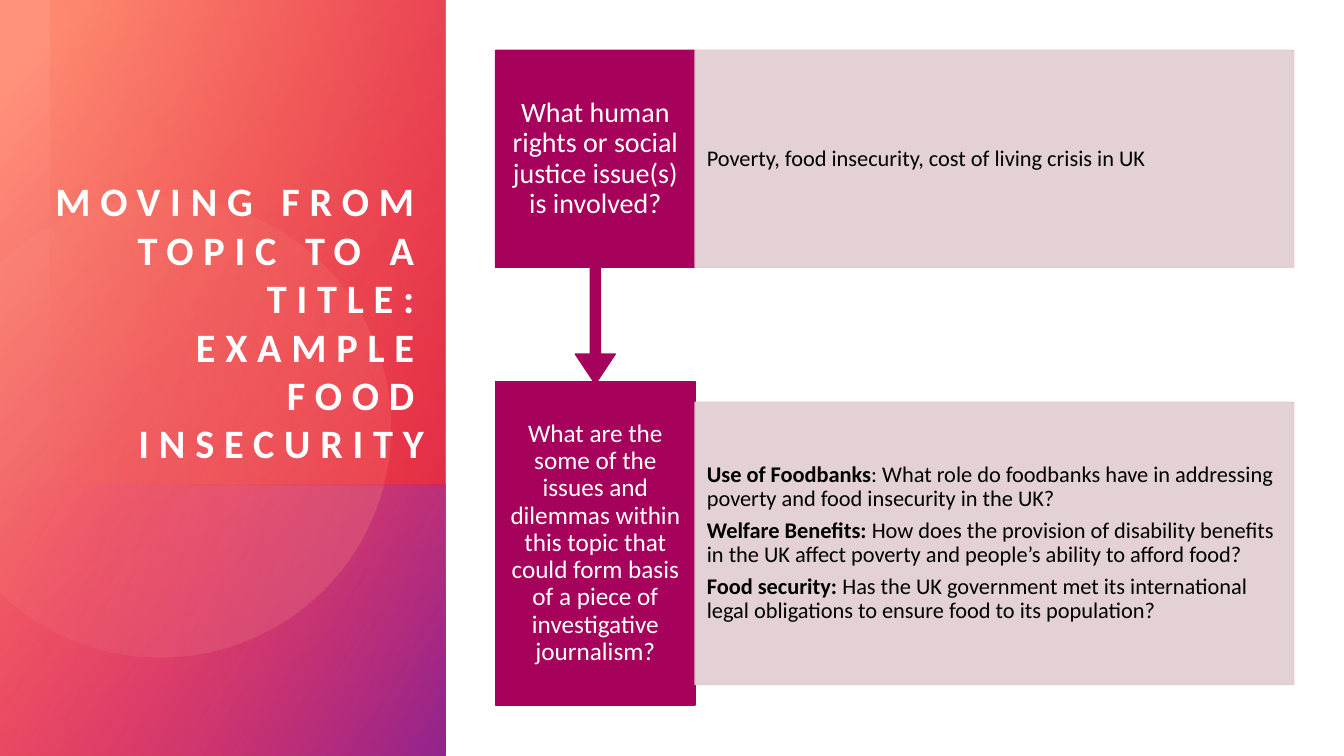
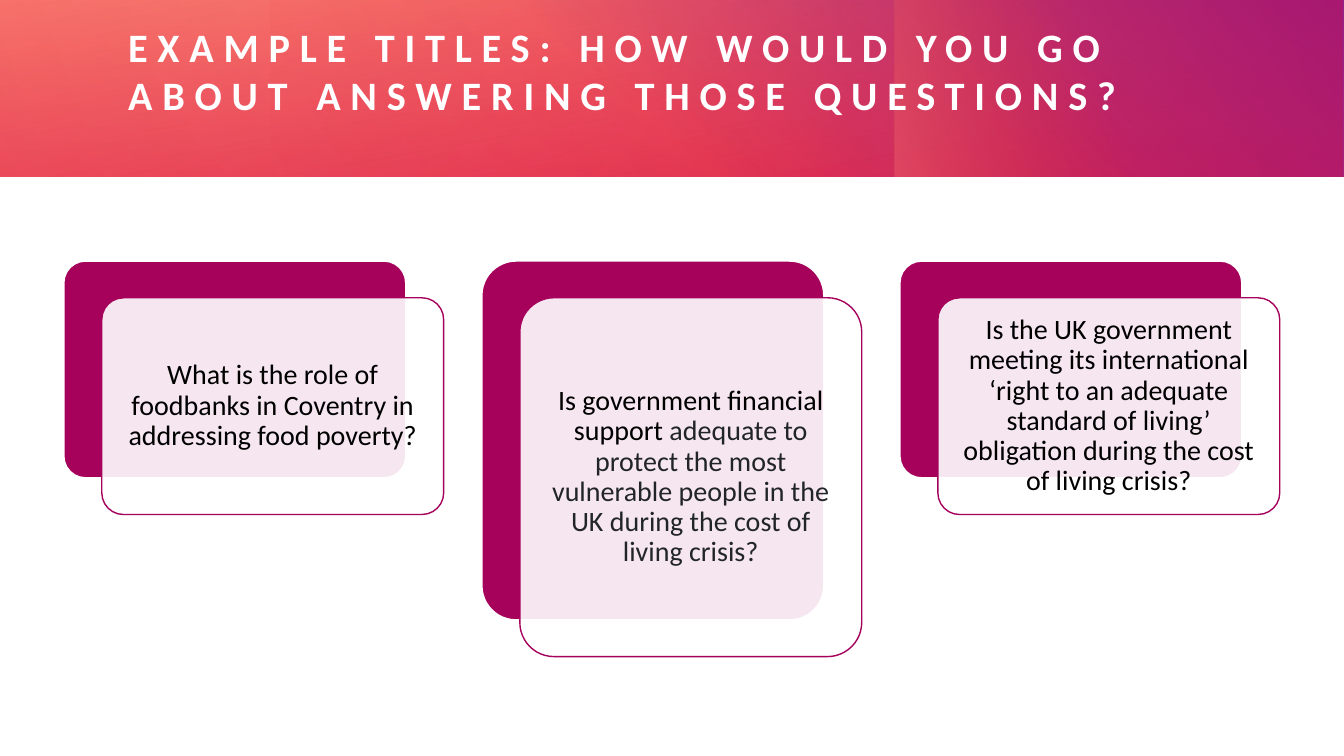
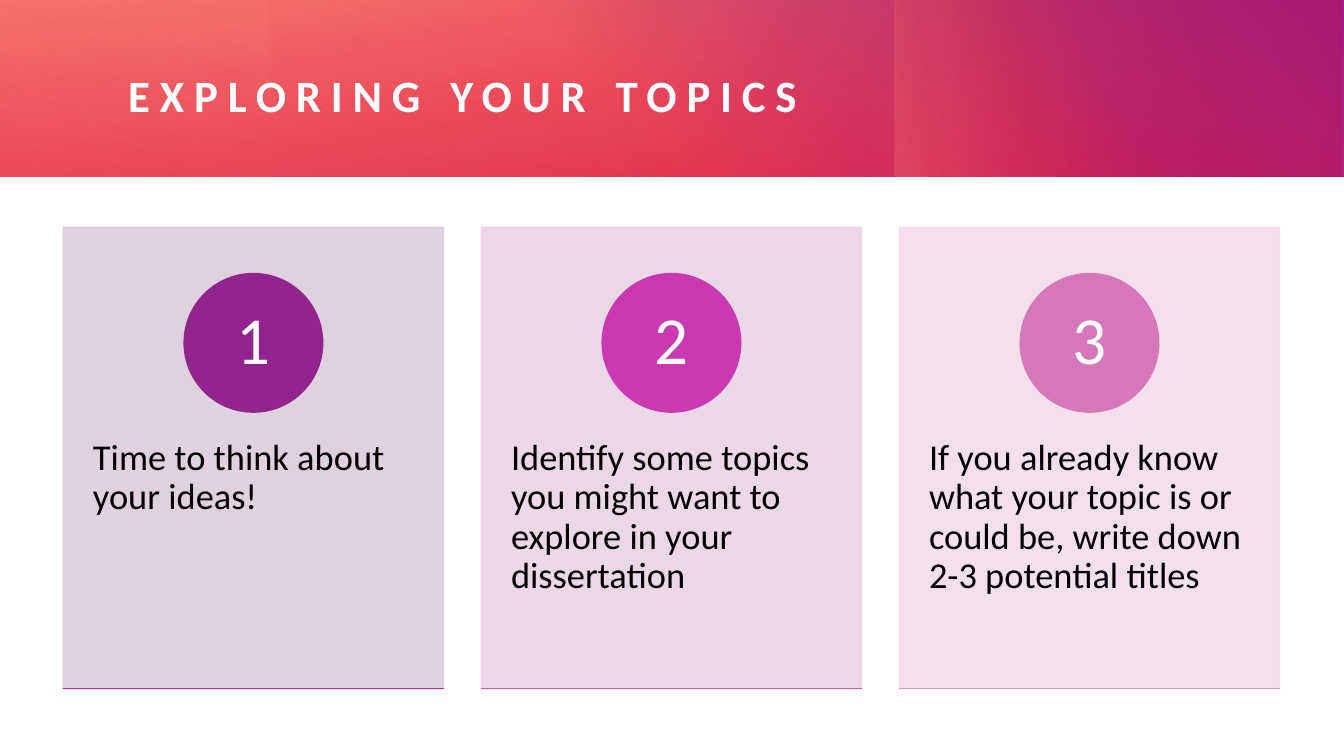
from dataclasses import dataclass
from math import acos, cos, sin

from pptx import Presentation
from pptx.dml.color import RGBColor
from pptx.enum.shapes import MSO_CONNECTOR, MSO_SHAPE
from pptx.enum.text import MSO_ANCHOR, MSO_AUTO_SIZE, PP_ALIGN
from pptx.oxml.ns import qn
from pptx.oxml.xmlchemy import OxmlElement
from pptx.util import Pt


@dataclass(frozen=True)
class Theme:
    font: str = "Calibri"
    white: str = "FFFFFF"
    black: str = "000000"
    ink: str = "212529"
    berry: str = "A6025C"
    blush: str = "E1CCD2"
    peach: str = "FF907A"
    pale_peach: str = "FFBCAF"
    red: str = "DA002F"
    orange: str = "FE4A00"
    rose: str = "FF5076"
    purple: str = "92248E"
    title: float = 28.8
    short_title: float = 32
    answer: float = 16
    long_question: float = 18
    question: float = 20
    step: float = 26
    number: float = 48


THEME = Theme()
WIDTH, HEIGHT = 960, 540
SIDE_WIDTH, SIDE_SPLIT = 318, 346.5
BAND_HEIGHT = 126
COLUMN_LEFT, COLUMN_STEP, COLUMN_WIDTH = 45.2, 298.6, 271.6


class Deck:
    def __init__(self, theme):
        self.theme = theme
        self.prs = Presentation()
        self.prs.slide_width, self.prs.slide_height = Pt(WIDTH), Pt(HEIGHT)
        self.slide = None

    def new_slide(self):
        self.slide = self.prs.slides.add_slide(self.prs.slide_layouts[5])

    def set_alpha(self, shape, alphas):
        colors = shape._element.spPr.iter(qn("a:srgbClr"))
        for color, alpha in zip(colors, alphas):
            if alpha < 100:
                node = OxmlElement("a:alpha")
                node.set("val", str(alpha * 1000))
                color.append(node)

    def paint_gradient(self, shape, stops, angle):
        shape.shadow.inherit = False
        shape.line.fill.background()
        shape.fill.gradient()
        shape.fill.gradient_angle = (360 - angle) % 360
        for stop, (position, color, _) in zip(shape.fill.gradient_stops, stops):
            stop.position = position / 100
            stop.color.rgb = RGBColor.from_string(color)
        self.set_alpha(shape, [alpha for _, _, alpha in stops])

    def wash(self, box, stops, angle, rotation=0, flip=False):
        left, top, width, height = box
        if rotation in (90, 270):
            left, top = left + (width - height) / 2, top + (height - width) / 2
            width, height = height, width
        shape = self.slide.shapes.add_shape(
            MSO_SHAPE.RECTANGLE, Pt(left), Pt(top), Pt(width), Pt(height))
        shape.rotation = rotation
        if flip:
            shape._element.spPr.find(qn("a:xfrm")).set("flipH", "1")
        self.paint_gradient(shape, stops, angle)

    def clipped_disc(self, x, y, radius, stops, angle, steps=90):
        limit = acos(-x / radius)
        turns = [limit * (2 * i / steps - 1) for i in range(steps + 1)]
        points = [(Pt(x + radius * cos(t)), Pt(y + radius * sin(t))) for t in turns]
        builder = self.slide.shapes.build_freeform(*points[0])
        builder.add_line_segments(points[1:], close=True)
        self.paint_gradient(builder.convert_to_shape(), stops, angle)

    def side_panel(self):
        t = self.theme
        self.wash((0, 0, SIDE_WIDTH, HEIGHT),
                  [(8, t.peach, 100), (100, t.red, 89)], 50, 270, True)
        self.wash((0, SIDE_SPLIT, SIDE_WIDTH, HEIGHT - SIDE_SPLIT),
                  [(0, t.rose, 0), (99, t.purple, 100)], 60, 270, True)
        self.clipped_disc(114.5, 305.3, 164.2,
                          [(36, t.pale_peach, 6), (100, t.peach, 26)], 14)
        self.wash((36, 0, SIDE_WIDTH - 36, SIDE_SPLIT),
                  [(0, t.red, 29), (100, t.orange, 0)], 110, 90, True)

    def top_band(self):
        t = self.theme
        for left, width, stops, angle, rotation in (
            (0, WIDTH, [(0, t.red, 83), (100, t.peach, 100)], 260, 0),
            (346.5, 613.5, [(22, t.purple, 0), (99, t.purple, 100)], 310, 0),
            (639, 269, [(45, t.orange, 0), (99, t.peach, 33)], 250, 270),
            (193, 766, [(0, t.red, 30), (99, t.red, 0)], 330, 180),
            (0, 623, [(0, t.red, 21), (99, t.red, 0)], 340, 0),
        ):
            self.wash((left, 0, width, BAND_HEIGHT), stops, angle, rotation)

    def add_run(self, paragraph, text, size, color, bold=False):
        run = paragraph.add_run()
        run.text = text
        run.font.name, run.font.size, run.font.bold = self.theme.font, Pt(size), bold
        run.font.color.rgb = RGBColor.from_string(color)
        return run

    def set_frame(self, frame, insets, anchor):
        frame.word_wrap = True
        frame.auto_size = MSO_AUTO_SIZE.NONE
        frame.vertical_anchor = anchor
        (frame.margin_left, frame.margin_top,
         frame.margin_right, frame.margin_bottom) = map(Pt, insets)

    def title(self, lines, box, size=None, align=PP_ALIGN.LEFT,
              anchor=MSO_ANCHOR.MIDDLE, bottom_inset=0):
        heading = self.slide.shapes.title
        heading.left, heading.top, heading.width, heading.height = map(Pt, box)
        self.set_frame(heading.text_frame, (0, 0, 0, bottom_inset), anchor)
        paragraph = heading.text_frame.paragraphs[0]
        paragraph.alignment = align
        for index, line in enumerate(lines):
            if index:
                paragraph.add_line_break()
            run = self.add_run(paragraph, line, size or self.theme.title,
                               self.theme.white, True)
            run._r.get_or_add_rPr().set("spc", "700")
        tree = self.slide.shapes._spTree
        tree.remove(heading._element)
        tree.append(heading._element)

    def band_title(self, text, size=None, bottom_inset=0):
        self.top_band()
        self.title([text], (91.5, 29.5, 817, 76.3), size, bottom_inset=bottom_inset)

    def block(self, kind, box, fill, line=None, alphas=(100, 100), adjustments=()):
        shape = self.slide.shapes.add_shape(kind, *map(Pt, box))
        shape.shadow.inherit = False
        for index, value in enumerate(adjustments):
            shape.adjustments[index] = value
        shape.fill.solid()
        shape.fill.fore_color.rgb = RGBColor.from_string(fill)
        shape.line.color.rgb = RGBColor.from_string(line or fill)
        shape.line.width = Pt(1)
        self.set_alpha(shape, alphas)
        return shape

    def fill_text(self, shape, paragraphs, size, insets, color=None,
                  align=PP_ALIGN.CENTER, anchor=MSO_ANCHOR.MIDDLE):
        frame = shape.text_frame
        self.set_frame(frame, insets, anchor)
        for index, runs in enumerate(paragraphs):
            paragraph = frame.add_paragraph() if index else frame.paragraphs[0]
            paragraph.alignment = align
            paragraph.line_spacing = 0.9
            paragraph.space_after = Pt(round(size * 0.35, 1))
            for text, bold, run_color in runs:
                self.add_run(paragraph, text, size,
                             run_color or color or self.theme.black, bold)

    def question(self, kind, box, text, size, adjustments=()):
        shape = self.block(kind, box, self.theme.berry, adjustments=adjustments)
        self.fill_text(shape, [[(text, False, None)]], size, (10, 11, 10, 11),
                       self.theme.white)

    def answer(self, top, height, paragraphs):
        shape = self.block(MSO_SHAPE.RECTANGLE, (496.4, top, 427.6, height),
                           self.theme.blush, alphas=(90, 90))
        self.fill_text(shape, paragraphs, self.theme.answer, (8.5, 16, 8.5, 16),
                       align=PP_ALIGN.LEFT)

    def stacked_card(self, column, height, runs):
        left, top, offset = COLUMN_LEFT + column * COLUMN_STEP, 186.5, 26.2
        width, kind = 244.2, MSO_SHAPE.ROUNDED_RECTANGLE
        self.block(kind, (left + 0.4, top, width, height), self.theme.berry,
                   self.theme.white, adjustments=[0.1])
        front = self.block(kind, (left + 27.5, top + offset, width, height),
                           self.theme.white, self.theme.berry, (90, 100), [0.1])
        self.fill_text(front, [runs], self.theme.question, (5.8,) * 4)

    def step_card(self, column, text, tint, disc, rule):
        left, top, height, diameter = COLUMN_LEFT + column * COLUMN_STEP, 162.4, 329.6, 99
        card = self.block(MSO_SHAPE.RECTANGLE, (left, top, COLUMN_WIDTH, height),
                          tint, alphas=(90, 90))
        self.fill_text(card, [[(text, False, None)]], self.theme.step,
                       (21.2, 151.4, 21.2, 26), align=PP_ALIGN.LEFT,
                       anchor=MSO_ANCHOR.TOP)
        badge = self.block(MSO_SHAPE.OVAL,
                           (left + (COLUMN_WIDTH - diameter) / 2, top + 33,
                            diameter, diameter), disc)
        self.fill_text(badge, [[(str(column + 1), False, None)]], self.theme.number,
                       (7.7, 1, 7.7, 1), self.theme.white)
        base = self.slide.shapes.add_connector(
            MSO_CONNECTOR.STRAIGHT, Pt(left), Pt(top + height),
            Pt(left + COLUMN_WIDTH), Pt(top + height))
        base.line.color.rgb = RGBColor.from_string(rule)
        base.line.width = Pt(1)
        base._element.spPr.append(OxmlElement("a:effectLst"))


def topic_slide(deck):
    deck.new_slide()
    deck.side_panel()
    deck.title(["MOVING FROM TOPIC TO A TITLE:", "EXAMPLE FOOD INSECURITY"],
               (36, 68.5, 267, 265), align=PP_ALIGN.RIGHT, anchor=MSO_ANCHOR.BOTTOM)
    deck.question(
        MSO_SHAPE.RECTANGLE, (354, 272.4, 142.5, 231.2),
        "What are the some of the issues and dilemmas within this topic that could "
        "form basis of a piece of investigative journalism?", THEME.long_question)
    deck.answer(287.4, 201.6, [
        [(label, True, None), (text, False, None)] for label, text in (
            ("Use of Foodbanks", ": What role do foodbanks have in addressing poverty "
             "and food insecurity in the UK?"),
            ("Welfare Benefits: ", "How does the provision of disability benefits in "
             "the UK affect poverty and people’s ability to afford food?"),
            ("Food security: ", "Has the UK government met its international legal "
             "obligations to ensure food to its population?"),
        )])
    deck.question(MSO_SHAPE.DOWN_ARROW_CALLOUT, (354, 36, 142.5, 238.3),
                  "What human rights or social justice issue(s) is involved?",
                  THEME.question, [0.05, 0.1, 0.15, 0.65])
    deck.answer(36, 154.8, [
        [("Poverty, food insecurity, cost of living crisis in UK", False, None)]])


def titles_slide(deck):
    deck.new_slide()
    deck.band_title("EXAMPLE TITLES: HOW WOULD YOU GO ABOUT ANSWERING THOSE QUESTIONS?",
                    bottom_inset=35)
    cards = (
        (154.8, [("What is the role of foodbanks in Coventry in addressing food "
                  "poverty?", False, None)]),
        (256.3, [("Is government financial support ", False, None),
                 ("adequate to protect the most vulnerable people in the UK during "
                  "the cost of living crisis?", False, THEME.ink)]),
        (154.8, [("Is the UK government meeting its international ‘right to an "
                  "adequate standard of living’ obligation during the cost of living "
                  "crisis?", False, None)]),
    )
    for column, (height, runs) in enumerate(cards):
        deck.stacked_card(column, height, runs)


def exploring_slide(deck):
    deck.new_slide()
    deck.band_title("EXPLORING YOUR TOPICS", THEME.short_title)
    steps = (
        ("Time to think about your ideas!", "DCCDDB", THEME.purple, "AF2DA2"),
        ("Identify some topics you might want to explore in your dissertation",
         "E9D4E4", "C939B1", "CF58B4"),
        ("If you already know what your topic is or could be, write down 2-3 "
         "potential titles", "F2DDEA", "D677BA", "DE95C4"),
    )
    for column, step in enumerate(steps):
        deck.step_card(column, *step)


def main():
    deck = Deck(THEME)
    topic_slide(deck)
    titles_slide(deck)
    exploring_slide(deck)
    deck.prs.save("out.pptx")


if __name__ == "__main__":
    main()
